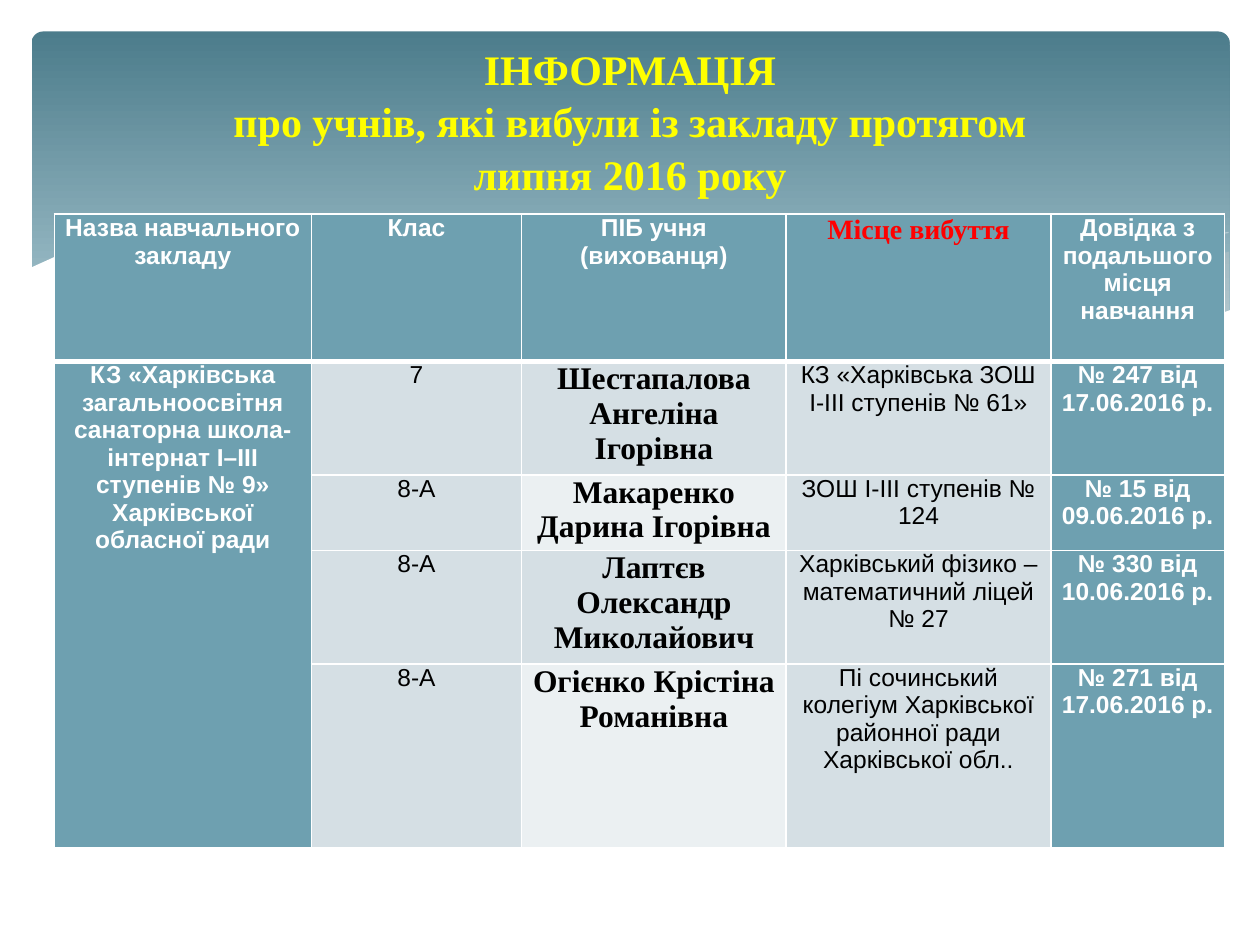
from lxml import etree
from pptx import Presentation
from pptx.dml.color import RGBColor
from pptx.enum import shapes, text
from pptx.oxml import ns
from pptx.util import Pt

WHITE = RGBColor(255, 255, 255)
BLACK = RGBColor(0, 0, 0)
YELLOW = RGBColor(255, 255, 0)
RED = RGBColor(255, 0, 0)
DARK = RGBColor(0x4C, 0x7C, 0x8B)
LIGHT = RGBColor(0xA8, 0xC6, 0xD0)
SAND = RGBColor(0xD4, 0xD2, 0xD0)
TEAL = RGBColor(0x6E, 0xA0, 0xB0)
PALE = RGBColor(0xD5, 0xDF, 0xE4)
MIST = RGBColor(0xEB, 0xF0, 0xF2)
SERIF = "Times New Roman"

# Wave outlines, in points from the corner of the wave band
RIGHT = [(685.5, 11.5), (646.5, 18.5), (603.5, 28), (525.5, 46), (459.5, 58.5),
         (491, 62.5), (528.5, 66), (561.5, 67.5), (598.5, 66), (629.5, 62),
         (661.5, 54), (686, 45.5), (686, 11.5)]
MIDDLE = [(626.5, 64), (586, 58.5), (541.5, 50.5), (492, 40.5), (436.5, 27.5),
          (393, 17.5), (353.5, 10), (301.5, 3.5), (257, 0.5), (219.5, 2),
          (189.5, 5), (229.5, 11), (274.5, 19.5), (307, 27.5), (365, 40.5),
          (416, 51), (462.5, 59), (503.5, 65), (548.5, 67.5), (587, 67.5)]
FALL = [(206, 8), (231, 4.5), (272, 2), (321, 3.5), (367.5, 7), (421.5, 14.5),
        (484, 25), (556, 41), (636.5, 63.5)]
RISE = [(425, 52.5), (502, 32.5), (564, 18.5), (618, 8.5), (659, 3), (685.5, 0.5)]
FRONT = [(687, 44.5), (660.5, 54), (631, 61), (595.5, 65.5), (566, 67), (519, 65),
         (464.5, 58.5), (400.5, 47.5), (345.5, 35.5), (305.5, 26), (246.5, 13),
         (193.5, 4.5), (149, 0.5), (111, 0), (69, 2), (38, 8), (16.5, 13.5),
         (0, 21), (0, 104.5), (687, 104.5)]

COLS = [146.9, 120.2, 151.2, 151.2, 99.4]
ROWS = [84.2, 63.4, 41.8, 63.4, 105.1]
HEAD = ["Назва навчального закладу", "Клас", "ПІБ учня (вихованця)",
        "Місце вибуття", "Довідка з подальшого місця навчання"]
SCHOOL = ("КЗ «Харківська загальноосвітня санаторна школа-інтернат I–III "
          "ступенів № 9» Харківської обласної ради")
PUPILS = [
    (SCHOOL, "7", "Шестапалова Ангеліна Ігорівна",
     "КЗ «Харківська ЗОШ І-ІІІ ступенів № 61»", "№ 247 від 17.06.2016 р."),
    ("", "8-А", "Макаренко Дарина Ігорівна",
     "ЗОШ І-ІІІ ступенів № 124", "№ 15 від 09.06.2016 р."),
    ("", "8-А", "Лаптєв Олександр Миколайович",
     "Харківський фізико – математичний ліцей № 27", "№ 330 від 10.06.2016 р."),
    ("", "8-А", "Огієнко Крістіна Романівна",
     "Пі сочинський колегіум Харківської районної ради Харківської обл..",
     "№ 271 від 17.06.2016 р."),
]


def write(frame, words, size=14, font="Arial", color=WHITE, bold=True, space=None):
    frame.word_wrap = True
    para = frame.paragraphs[0]
    para.text = words
    para.alignment = text.PP_ALIGN.CENTER
    para.line_spacing = space
    for run in para.runs:
        run.font.size, run.font.name, run.font.bold = Pt(size), font, bold
        run.font.color.rgb = color
    para.font.size = Pt(size)


def panel(slide, x, y, w, h):
    shape = slide.shapes.add_shape(shapes.MSO_SHAPE.ROUNDED_RECTANGLE,
                                   Pt(x), Pt(y), Pt(w), Pt(h))
    shape.adjustments[0] = 0.034
    shape.shadow.inherit = False
    shape.line.fill.background()
    shape.fill.gradient()
    shape.fill.gradient_angle = 270
    for stop, color, spot in zip(shape.fill.gradient_stops, (DARK, LIGHT), (0, 0.9)):
        stop.color.rgb, stop.position = color, spot


def curve(slide, x, y, dots, fill=None, alpha=100):
    dots = [(Pt(x + dx), Pt(y + dy)) for dx, dy in dots]
    path = slide.shapes.build_freeform(*dots[0])
    path.add_line_segments(dots[1:], close=fill is not None)
    shape = path.convert_to_shape()
    shape.shadow.inherit = False
    if fill is None:
        shape.fill.background()
        shape.line.color.rgb, shape.line.width = WHITE, Pt(0.25)
        return
    shape.line.fill.background()
    shape.fill.solid()
    shape.fill.fore_color.rgb = fill
    if alpha < 100:
        tint = shape.fill._xPr.find(".//" + ns.qn("a:srgbClr"))
        etree.SubElement(tint, ns.qn("a:alpha"), val=str(alpha * 1000))


def waves(slide, x, y):
    curve(slide, x, y, RIGHT, SAND, 29)
    curve(slide, x, y, MIDDLE, SAND, 40)
    curve(slide, x, y, FALL)
    curve(slide, x, y, RISE)
    curve(slide, x, y, FRONT, WHITE)


def title(slide, x, y, w, h):
    frame = slide.shapes.add_textbox(Pt(x), Pt(y), Pt(w), Pt(h)).text_frame
    frame.vertical_anchor = text.MSO_ANCHOR.MIDDLE
    frame.margin_bottom = Pt(32)
    write(frame, "ІНФОРМАЦІЯ\vпро учнів, які вибули із закладу протягом\vлипня 2016 року",
          size=24, font=SERIF, color=YELLOW, space=1.05)


def border(cell, **widths):
    props = cell._tc.get_or_add_tcPr()
    for spot, side in enumerate("LRTB"):
        line = etree.Element(ns.qn("a:ln" + side), w=str(Pt(widths.get(side, 1))))
        fill = etree.SubElement(line, ns.qn("a:solidFill"))
        etree.SubElement(fill, ns.qn("a:srgbClr"), val=str(WHITE))
        props.insert(spot, line)


def style(row, col):
    """Fill and text format of a cell."""
    if row == 0 and col == 3:
        return TEAL, dict(size=16, font=SERIF, color=RED)
    if row == 0 or col in (0, 4):
        return TEAL, {}
    if col == 2:
        return (PALE if row % 2 else MIST), dict(size=18, font=SERIF, color=BLACK)
    return PALE, dict(color=BLACK, bold=False)


def table(slide, x, y):
    grid = slide.shapes.add_table(len(ROWS), len(COLS), Pt(x), Pt(y),
                                  Pt(sum(COLS)), Pt(sum(ROWS))).table
    for col, width in zip(grid.columns, COLS):
        col.width = Pt(width)
    for row, height in zip(grid.rows, ROWS):
        row.height = Pt(height)
    for r, line in enumerate([HEAD] + PUPILS):
        for c, words in enumerate(line):
            cell = grid.cell(r, c)
            fill, form = style(r, c)
            cell.margin_left = cell.margin_right = Pt(5)
            cell.margin_top = cell.margin_bottom = 0
            cell.fill.solid()
            cell.fill.fore_color.rgb = fill
            border(cell, T=3 if r == 1 else 1, B=3 if r == 0 else 1)
            if words:
                write(cell.text_frame, words, **form)
    # One school for all pupils
    grid.cell(1, 0).merge(grid.cell(len(PUPILS), 0))


def main():
    deck = Presentation()
    deck.slide_width, deck.slide_height = Pt(720), Pt(540)
    slide = deck.slides.add_slide(deck.slide_layouts[6])
    panel(slide, 18, 18, 684.7, 194.4)
    waves(slide, 16.5, 132.5)
    title(slide, 36, 37.4, 648, 90.7)
    table(slide, 31, 122.4)
    deck.save("out.pptx")


if __name__ == "__main__":
    main()
